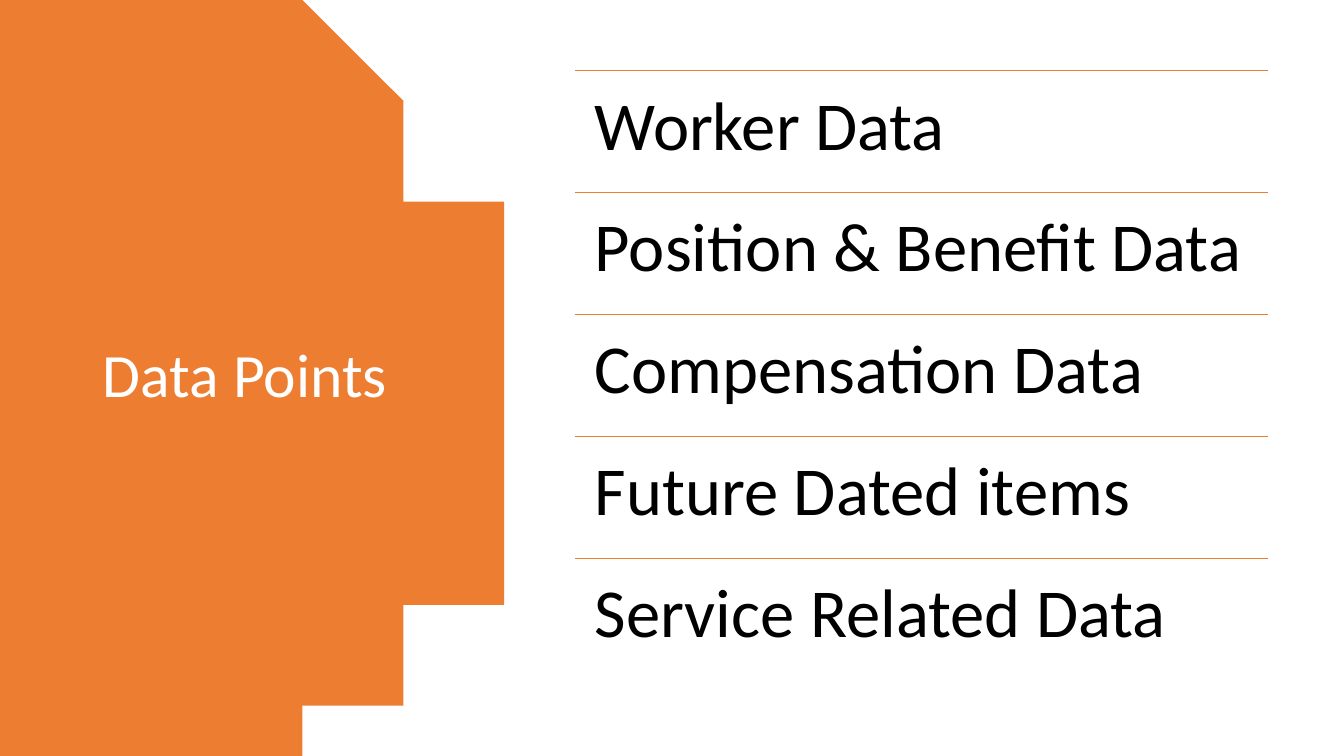
import math
from dataclasses import dataclass

import pptx
import pptx.dml.color
import pptx.enum.shapes
import pptx.enum.text
import pptx.oxml
import pptx.oxml.ns
import pptx.shapes.shapetree
import pptx.text.text
import pptx.util
from pptx.util import Inches

ORANGE = pptx.dml.color.RGBColor(0xED, 0x7D, 0x31)
WHITE = pptx.dml.color.RGBColor(0xFF, 0xFF, 0xFF)
BLACK = pptx.dml.color.RGBColor(0, 0, 0)

WIDTH, HEIGHT = 13.33, 7.5
DISC_MID, DISC_RAD = 0.53, 4.4
LEFT, TOP, SPAN, PITCH = 5.7, 0.7, 6.88, 1.21
STEPS = 80


@dataclass(frozen=True)
class Row:
    text: str
    top: float


NAMES = (
    "Worker Data",
    "Position & Benefit Data",
    "Compensation Data",
    "Future Dated items",
    "Service Related Data",
)
ROWS = [Row(name, TOP + i * PITCH) for i, name in enumerate(NAMES)]


def set_text(
    frame: pptx.text.text.TextFrame,
    text: str,
    size: float,
    color: pptx.dml.color.RGBColor,
) -> None:
    frame.text = text
    frame.word_wrap = True
    frame.auto_size = pptx.enum.text.MSO_AUTO_SIZE.NONE
    para = frame.paragraphs[0]
    para.alignment = pptx.enum.text.PP_ALIGN.LEFT
    para.line_spacing = 0.9
    para.font.name = "Calibri"
    para.font.size = pptx.util.Pt(size)
    para.font.color.rgb = color


def draw_disc(shapes: pptx.shapes.shapetree.SlideShapes) -> None:
    """Draw the disc, cut by the slide edges, behind the title."""
    half = math.asin(HEIGHT / 2 / DISC_RAD)
    turns = [half * (2 * i / STEPS - 1) for i in range(STEPS + 1)]
    arc = [
        (DISC_MID + DISC_RAD * math.cos(turn),
         HEIGHT / 2 + DISC_RAD * math.sin(turn))
        for turn in turns
    ]
    pen = shapes.build_freeform(0, 0, scale=float(Inches(1)))
    pen.add_line_segments(arc + [(0, HEIGHT)], close=True)
    disc = pen.convert_to_shape()
    disc.shadow.inherit = False
    disc.fill.solid()
    disc.fill.fore_color.rgb = ORANGE
    disc.line.fill.background()
    shapes.title.element.addprevious(disc.element)


def draw_title(shapes: pptx.shapes.shapetree.SlideShapes) -> None:
    title = shapes.title
    title.left, title.top = Inches(0.92), Inches(0.7)
    title.width, title.height = Inches(3.23), Inches(6.09)
    set_text(title.text_frame, "Data Points", 44, WHITE)
    title.text_frame.vertical_anchor = pptx.enum.text.MSO_ANCHOR.MIDDLE


def draw_row(shapes: pptx.shapes.shapetree.GroupShapes, row: Row) -> None:
    left, top, width = Inches(LEFT), Inches(row.top), Inches(SPAN)
    rule = shapes.add_connector(
        pptx.enum.shapes.MSO_CONNECTOR.STRAIGHT, left, top, left + width, top
    )
    rule.line.color.rgb = ORANGE
    rule.line.width = pptx.util.Pt(1)
    rule.element.spPr.append(
        pptx.oxml.parse_xml(f"<a:effectLst {pptx.oxml.ns.nsdecls('a')}/>")
    )
    frame = shapes.add_textbox(left, top, width, Inches(PITCH)).text_frame
    frame.margin_left = frame.margin_right = Inches(0.2)
    frame.margin_top = frame.margin_bottom = Inches(0.2)
    set_text(frame, row.text, 49, BLACK)


def main() -> None:
    deck = pptx.Presentation()
    deck.slide_width, deck.slide_height = Inches(WIDTH), Inches(HEIGHT)
    slide = deck.slides.add_slide(deck.slide_layouts.get_by_name("Title Only"))
    draw_disc(slide.shapes)
    draw_title(slide.shapes)
    group = slide.shapes.add_group_shape()
    for row in ROWS:
        draw_row(group.shapes, row)
    deck.save("out.pptx")


if __name__ == "__main__":
    main()
